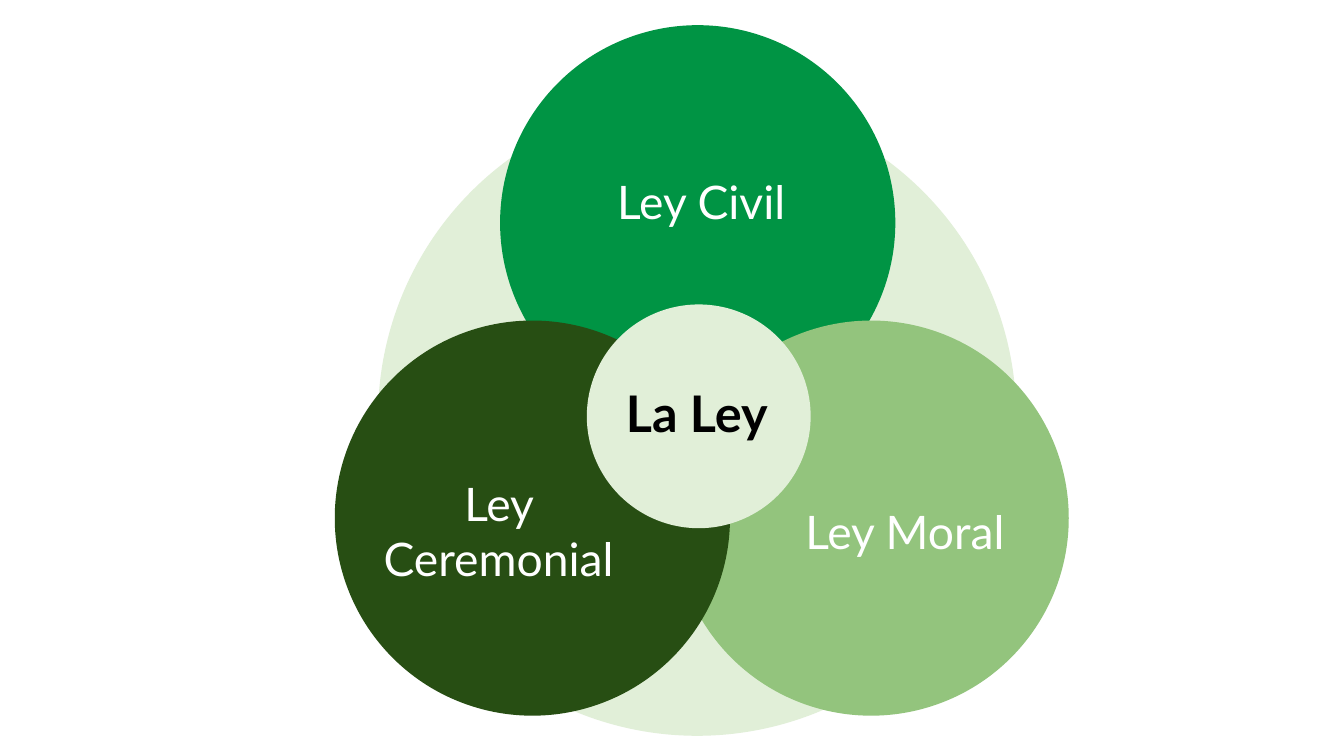
from pptx import Presentation
from pptx import util as u
from pptx.dml.color import RGBColor
from pptx.enum import shapes, text

WHITE = RGBColor(0xFF, 0xFF, 0xFF)
BLACK = RGBColor(0x00, 0x00, 0x00)
PALE = RGBColor(0xE1, 0xEF, 0xD8)
CIVIL = RGBColor(0x00, 0x94, 0x44)
MORAL = RGBColor(0x93, 0xC4, 0x7D)
CEREMONIAL = RGBColor(0x27, 0x4E, 0x13)

FONT = "Lato"
LAW_SIZE = 3.92
LABEL_WIDTH, LABEL_HEIGHT = 2.71, 1.27

LAWS = [
    ("Ley Civil", CIVIL, (1.64, 0), (0.64, 1.11)),
    ("Ley Moral", MORAL, (3.36, 2.93), (0.94, 1.45)),
    ("Ley Ceremonial", CEREMONIAL, (0, 2.93), (0.27, 1.45)),
]


def add_filled(parent, kind, left, top, width, height, color):
    shape = parent.add_shape(kind, u.Inches(left), u.Inches(top),
                             u.Inches(width), u.Inches(height))
    shape.shadow.inherit = False
    shape.fill.solid()
    shape.fill.fore_color.rgb = color
    shape.line.fill.background()
    return shape


def add_circle(parent, left, top, size, color):
    return add_filled(parent, shapes.MSO_SHAPE.OVAL, left, top, size, size, color)


def write(box, wording, size, color, inset, align, anchor, bold=False):
    frame = box.text_frame
    frame.word_wrap = True
    frame.vertical_anchor = anchor
    frame.margin_left = frame.margin_right = u.Inches(inset)
    frame.margin_top = frame.margin_bottom = u.Inches(inset)
    frame.text = wording
    para = frame.paragraphs[0]
    para.alignment = align
    span = para.runs[0]
    span.font.name = FONT
    span.font.size = u.Pt(size)
    span.font.bold = bold
    span.font.color.rgb = color


def add_law(slide, left, top, name, color, label_offset):
    group = slide.shapes.add_group_shape()
    add_circle(group.shapes, left, top, LAW_SIZE, color)
    label = add_filled(group.shapes, shapes.MSO_SHAPE.RECTANGLE,
                       left + label_offset[0], top + label_offset[1],
                       LABEL_WIDTH, LABEL_HEIGHT, color)
    write(label, name, 33, WHITE, 0.13,
          text.PP_ALIGN.CENTER, text.MSO_ANCHOR.MIDDLE)


def add_center(slide, left, top):
    add_circle(slide.shapes, left, top, 2.22, PALE)
    title = slide.shapes.add_textbox(u.Inches(left + 0.29), u.Inches(top + 0.67),
                                     u.Inches(1.63), u.Inches(1.17))
    write(title, "La Ley", 36, BLACK, 0.1,
          text.PP_ALIGN.LEFT, text.MSO_ANCHOR.TOP, bold=True)


def add_law_diagram(slide, left, top):
    add_circle(slide.shapes, left + 0.43, top + 0.72, 6.33, PALE)
    for name, color, (across, down), label_offset in LAWS:
        add_law(slide, left + across, top + down, name, color, label_offset)
    add_center(slide, left + 2.5, top + 2.77)


def main():
    deck = Presentation()
    deck.slide_width = u.Inches(13.33)
    deck.slide_height = u.Inches(7.5)
    slide = deck.slides.add_slide(deck.slide_layouts[6])
    add_law_diagram(slide, 3.32, 0.25)
    deck.save("out.pptx")


if __name__ == "__main__":
    main()
